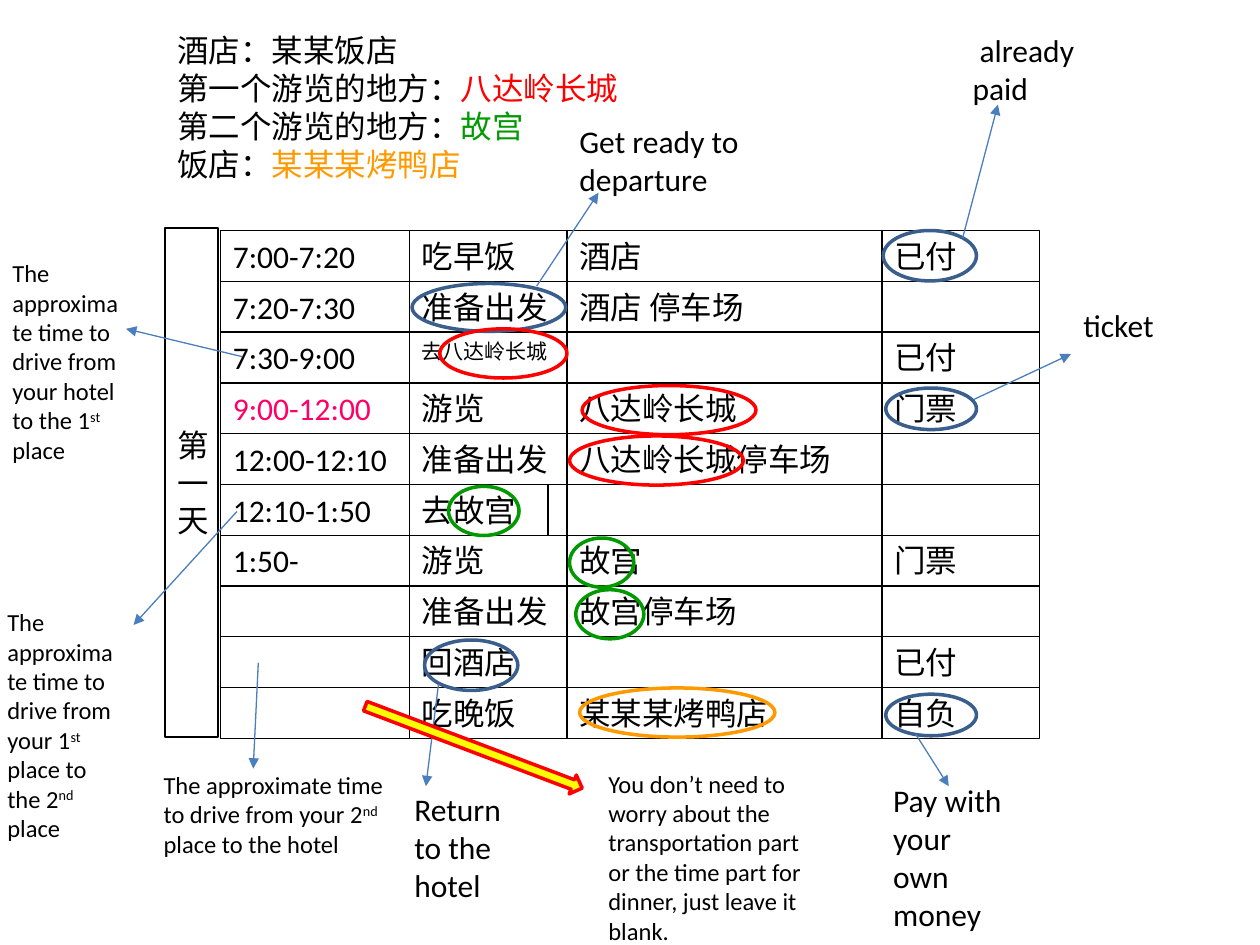
from lxml.etree import SubElement
from pptx import Presentation
from pptx.dml.color import RGBColor
from pptx.enum.shapes import MSO_CONNECTOR as Connector, MSO_SHAPE as Shape
from pptx.enum.text import MSO_ANCHOR as Anchor, PP_ALIGN as Align
from pptx.oxml.ns import qn
from pptx.util import Inches, Pt

# The slide is a grid of 100 columns by 75 rows
WIDTH, HEIGHT = Inches(10), Inches(7.5)
COLUMN, ROW = WIDTH / 100, HEIGHT / 75

BLACK, RED, GREEN, ORANGE = "000000", "FF0000", "009900", "FF9900"
PINK, YELLOW, NAVY, BLUE = "FF0066", "FFFF00", "3A5F8C", "4B7EBC"
FRAME = {"word_wrap": True, "vertical_anchor": Anchor.TOP}
RAISED = "raised"

# Schedule: column edges, first row and row height in grid units
EDGES = [17.5, 32.5, 45, 70, 82.5]
FIRST_ROW, ROW_HEIGHT = 18.3, 4.03
SCHEDULE = [
    ["7:00-7:20", "吃早饭", "酒店", "已付"],
    ["7:20-7:30", "准备出发", "酒店 停车场", ""],
    ["7:30-9:00", "去八达岭长城", "", "已付"],
    ["9:00-12:00", "游览", "八达岭长城", "门票"],
    ["12:00-12:10", "准备出发", "八达岭长城停车场", ""],
    ["12:10-1:50", "去故宫", "", ""],
    ["1:50-", "游览", "故宫", "门票"],
    ["", "准备出发", "故宫停车场", ""],
    ["", "回酒店", "", "已付"],
    ["", "吃晚饭", "某某某烤鸭店", "自负"],
]
CELL_SIZES = {(2, 1): 12}
CELL_COLOURS = {(3, 0): PINK}
CELL_WIDTHS = {(5, 1): 11}

HEADING = [
    [("酒店：某某饭店", BLACK)],
    [("第一个游览的地方：", BLACK), ("八达岭长城", RED)],
    [("第二个游览的地方：", BLACK), ("故宫", GREEN)],
    [("饭店：", BLACK), ("某某某烤鸭店", ORANGE)],
]

# Ellipses: left, top, width, height, colour
RINGS = [
    (70.1, 18.3, 7.4, 4, NAVY),
    (32.7, 22.5, 12.2, 3.8, NAVY),
    (34.9, 26.1, 10.1, 3.9, RED),
    (46.2, 30.6, 13.8, 3.9, RED),
    (70.3, 30.8, 7.2, 3.3, NAVY),
    (45.2, 34.6, 13.8, 3.9, RED),
    (35.6, 38.6, 5.6, 3.9, GREEN),
    (45.2, 42.7, 5.1, 3.9, GREEN),
    (45.7, 46.8, 5.4, 3.9, GREEN),
    (33.7, 50.8, 7.4, 4, NAVY),
    (46, 54.6, 15.5, 3.9, ORANGE),
    (70.3, 55.1, 7.2, 3.3, NAVY),
]

# Arrows: start column and row, end column and row
ARROWS = [
    (76.4, 18.9, 79.2, 8.3),
    (42.6, 22.7, 47.5, 15.3),
    (19.2, 28.3, 10, 26.1),
    (77.3, 31.7, 85, 28.1),
    (18.8, 40.6, 10.6, 49.6),
    (34.8, 54.3, 33.8, 62.4),
    (72.7, 58.3, 75.3, 62.4),
    (20.5, 52.6, 20.1, 61),
]

# Notes: left, top, width, height, text size, spans
NOTES = [
    (76.2, 2, 11.1, 7.1, 18, [(" already paid", BLACK)]),
    (45, 9.2, 19.2, 7.1, 18, [("Get ready to departure", BLACK)]),
    (85, 23.8, 11.1, 4, 18, [("ticket", BLACK)]),
    (31.9, 62.2, 11.1, 10.1, 18, [("Return to the hotel", BLACK)]),
    (69.9, 61.5, 11.1, 13.1, 18, [("Pay with your own money", BLACK)]),
    (0, 20, 10.6, 17.5, 14,
     [("The approximate time to drive from your hotel to the 1", BLACK),
      ("st", RAISED), (" place", BLACK)]),
    (-0.4, 47.7, 10.6, 19.9, 14,
     [("The approximate time to drive from your 1", BLACK), ("st", RAISED),
      (" place to the 2", BLACK), ("nd", RAISED), (" place", BLACK)]),
    (12, 60.6, 19.4, 10.4, 14,
     [("The approximate time to drive from your 2", BLACK),
      ("nd", RAISED), (" place to the hotel", BLACK)]),
    (47.3, 60.5, 18.2, 15.1, 14,
     [("You don’t need to worry about the transportation part or the time "
       "part for dinner, just leave it blank.", BLACK)]),
]


def colour(code):
    return RGBColor.from_string(code)


def place(left, top, width, height):
    return (round(left * COLUMN), round(top * ROW),
            round(width * COLUMN), round(height * ROW))


def write(box, paragraphs, size, anchor=Anchor.TOP):
    """Fill a box with paragraphs, each a list of (text, colour) spans."""
    frame = box.text_frame
    for name, value in {**FRAME, "vertical_anchor": anchor}.items():
        setattr(frame, name, value)
    for number, spans in enumerate(paragraphs):
        para = frame.add_paragraph() if number else frame.paragraphs[0]
        para.alignment = Align.LEFT
        for text, style in spans:
            span = para.add_run()
            span.text = text
            for name, value in {"name": "Calibri", "size": Pt(size)}.items():
                setattr(span.font, name, value)
            raised = style == RAISED
            span.font.color.rgb = colour(BLACK if raised else style)
            if raised:
                span.font._element.set("baseline", "30000")


def add_outline(page, kind, area, line, weight, fill=None):
    box = page.shapes.add_shape(kind, *place(*area))
    box.shadow.inherit = False
    if fill:
        box.fill.solid()
        box.fill.fore_color.rgb = colour(fill)
    else:
        box.fill.background()
    box.line.color.rgb = colour(line)
    box.line.width = Pt(weight)
    return box


def add_note(page, area, paragraphs, size):
    write(page.shapes.add_textbox(*place(*area)), paragraphs, size)


def add_arrow(page, start_x, start_y, end_x, end_y):
    arrow = page.shapes.add_connector(
        Connector.STRAIGHT, *place(start_x, start_y, end_x, end_y))
    arrow.line.color.rgb = colour(BLUE)
    arrow.line.width = Pt(0.75)
    SubElement(arrow.line._get_or_add_ln(), qn("a:tailEnd"), type="triangle")
    SubElement(arrow._element.spPr, qn("a:effectLst"))


def add_schedule(page):
    day = add_outline(page, Shape.RECTANGLE, (13.1, 18.1, 4.2, 40.4), BLACK, 0.75)
    write(day, [[(sign, BLACK)] for sign in "第一天"], 18, Anchor.MIDDLE)
    for row, texts in enumerate(SCHEDULE):
        for column, text in enumerate(texts):
            key = row, column
            left, right = EDGES[column:column + 2]
            area = (left, FIRST_ROW + row * ROW_HEIGHT,
                    CELL_WIDTHS.get(key, right - left), ROW_HEIGHT)
            cell = add_outline(page, Shape.RECTANGLE, area, BLACK, 0.75)
            if text:
                write(cell, [[(text, CELL_COLOURS.get(key, BLACK))]],
                      CELL_SIZES.get(key, 18))


def main():
    deck = Presentation()
    deck.slide_width, deck.slide_height = WIDTH, HEIGHT
    page = deck.slides.add_slide(deck.slide_layouts[6])

    # Schedule and heading
    add_schedule(page)
    add_note(page, (13.1, 2, 52.5, 16.2), HEADING, 18)

    # Rings, arrows and notes
    for *area, line in RINGS:
        add_outline(page, Shape.OVAL, area, line, 2)
    for ends in ARROWS:
        add_arrow(page, *ends)
    for *area, size, spans in NOTES:
        add_note(page, area, [spans], size)

    # Thick arrow to the remark on blank times
    pointer = add_outline(page, Shape.RIGHT_ARROW, (28.4, 58.5, 18.4, 1.6),
                          RED, 2, YELLOW)
    pointer.rotation = 20.7

    deck.save("out.pptx")


if __name__ == "__main__":
    main()
